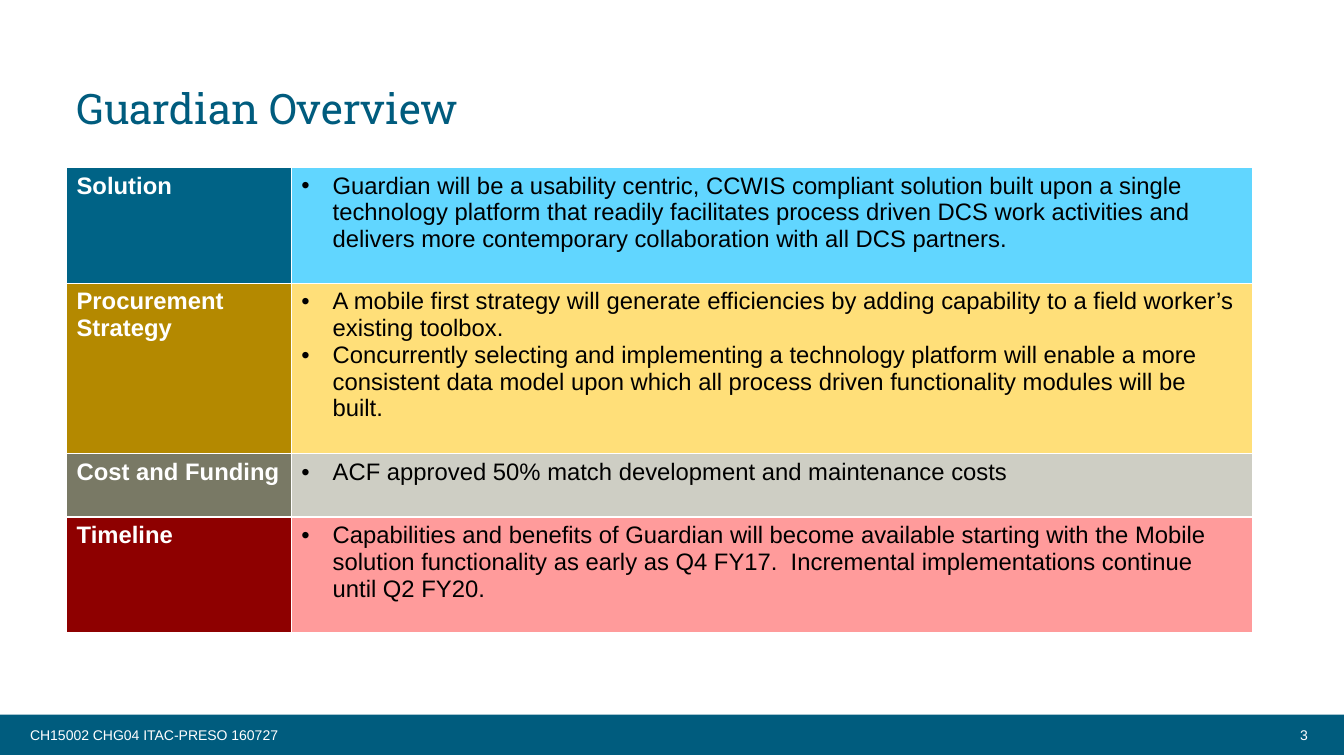
from pptx import Presentation
from pptx.dml.color import RGBColor
from pptx.enum.shapes import MSO_SHAPE
from pptx.enum.text import MSO_ANCHOR, PP_ALIGN
from pptx.oxml import parse_xml
from pptx.oxml.ns import nsdecls
from pptx.util import Inches, Pt

HUES = {
    "white": "FFFFFF", "black": "000000", "teal": "005C7E",
    "blue": "006386", "sky": "61D6FF",
    "gold": "B48900", "sand": "FFDF79",
    "olive": "797965", "stone": "CECEC4",
    "red": "8E0000", "pink": "FF9B9B",
}

TITLE = "Guardian Overview"
FOOTER = "CH15002 CHG04 ITAC-PRESO 160727"
NUMBER = "3"
TOPICS = [
    ("Solution", "blue", "sky", 1.15, [
        "Guardian will be a usability centric, CCWIS compliant solution built upon a single technology platform that readily facilitates process driven DCS work activities and delivers more contemporary collaboration with all DCS partners.",
    ]),
    ("Procurement Strategy", "gold", "sand", 1.69, [
        "A mobile first strategy will generate efficiencies by adding capability to a field worker’s existing toolbox.",
        "Concurrently selecting and implementing a technology platform will enable a more consistent data model upon which all process driven functionality modules will be built.",
    ]),
    ("Cost and Funding", "olive", "stone", 0.63, [
        "ACF approved 50% match development and maintenance costs",
    ]),
    ("Timeline", "red", "pink", 1.15, [
        "Capabilities and benefits of Guardian will become available starting with the Mobile solution functionality as early as Q4 FY17.  Incremental implementations continue until Q2 FY20.",
    ]),
]
WIDTHS = [2.23, 9.53]
LEFT, TOP = 0.66, 1.66


def color(name):
    return RGBColor.from_string(HUES[name])


def style(font, size, hue, face="Arial", bold=False):
    font.size, font.name, font.bold = Pt(size), face, bold
    font.color.rgb = color(hue)


def add_text(slide, box, text, size, hue, face="Arial",
             align=PP_ALIGN.LEFT, anchor=MSO_ANCHOR.TOP):
    frame = slide.shapes.add_textbox(*map(Inches, box)).text_frame
    frame.word_wrap = True
    frame.vertical_anchor = anchor
    frame.text = text
    para = frame.paragraphs[0]
    para.alignment = align
    style(para.runs[0].font, size, hue, face)
    return para


def add_bullet(para):
    props = para._p.get_or_add_pPr()
    props.set("marL", str(Inches(0.31)))
    props.set("indent", str(-Inches(0.31)))
    props.append(parse_xml(f'<a:buFont {nsdecls("a")} typeface="Arial"/>'))
    props.append(parse_xml(f'<a:buChar {nsdecls("a")} char="•"/>'))


def fill_cell(cell, lines, fill, hue, bold, bullet):
    cell.text_frame.text = "\n".join(lines)
    for para in cell.text_frame.paragraphs:
        if bullet:
            add_bullet(para)
        style(para.runs[0].font, 17, hue, bold=bold)
    props = cell._tc.get_or_add_tcPr()
    for side in ("lnL", "lnR", "lnT", "lnB"):
        props.append(parse_xml(
            f'<a:{side} {nsdecls("a")} w="{Pt(1)}"><a:solidFill>'
            f'<a:srgbClr val="{HUES["white"]}"/></a:solidFill></a:{side}>'))
    cell.fill.solid()
    cell.fill.fore_color.rgb = color(fill)


def add_topics(slide):
    heights = [topic[3] for topic in TOPICS]
    table = slide.shapes.add_table(
        len(TOPICS), len(WIDTHS), Inches(LEFT), Inches(TOP),
        Inches(sum(WIDTHS)), Inches(sum(heights))).table
    table.first_row = table.horz_banding = False
    for col, width in zip(table.columns, WIDTHS):
        col.width = Inches(width)
    for row, (head, dark, light, height, points) in zip(table.rows, TOPICS):
        row.height = Inches(height)
        fill_cell(row.cells[0], [head], dark, "white", True, False)
        fill_cell(row.cells[1], points, light, "black", False, True)


def main():
    deck = Presentation()
    deck.slide_width, deck.slide_height = Inches(13.33), Inches(7.5)
    slide = deck.slides.add_slide(deck.slide_layouts[6])

    band = slide.shapes.add_shape(
        MSO_SHAPE.RECTANGLE, 0, Inches(7.09), deck.slide_width, Inches(0.4))
    band.shadow.inherit = False
    band.fill.solid()
    band.fill.fore_color.rgb = color("teal")
    band.line.fill.background()

    title = add_text(slide, (LEFT, 0.71, sum(WIDTHS), 0.79), TITLE, 30, "teal",
                     "Roboto Slab", anchor=MSO_ANCHOR.MIDDLE)
    title.line_spacing = 0.9
    add_topics(slide)
    add_text(slide, (0.2, 7.16, 9.11, 0.2), FOOTER, 10, "white")
    add_text(slide, (10.82, 7.16, 2.25, 0.2), NUMBER, 10, "white",
             align=PP_ALIGN.RIGHT)
    deck.save("out.pptx")


if __name__ == "__main__":
    main()
